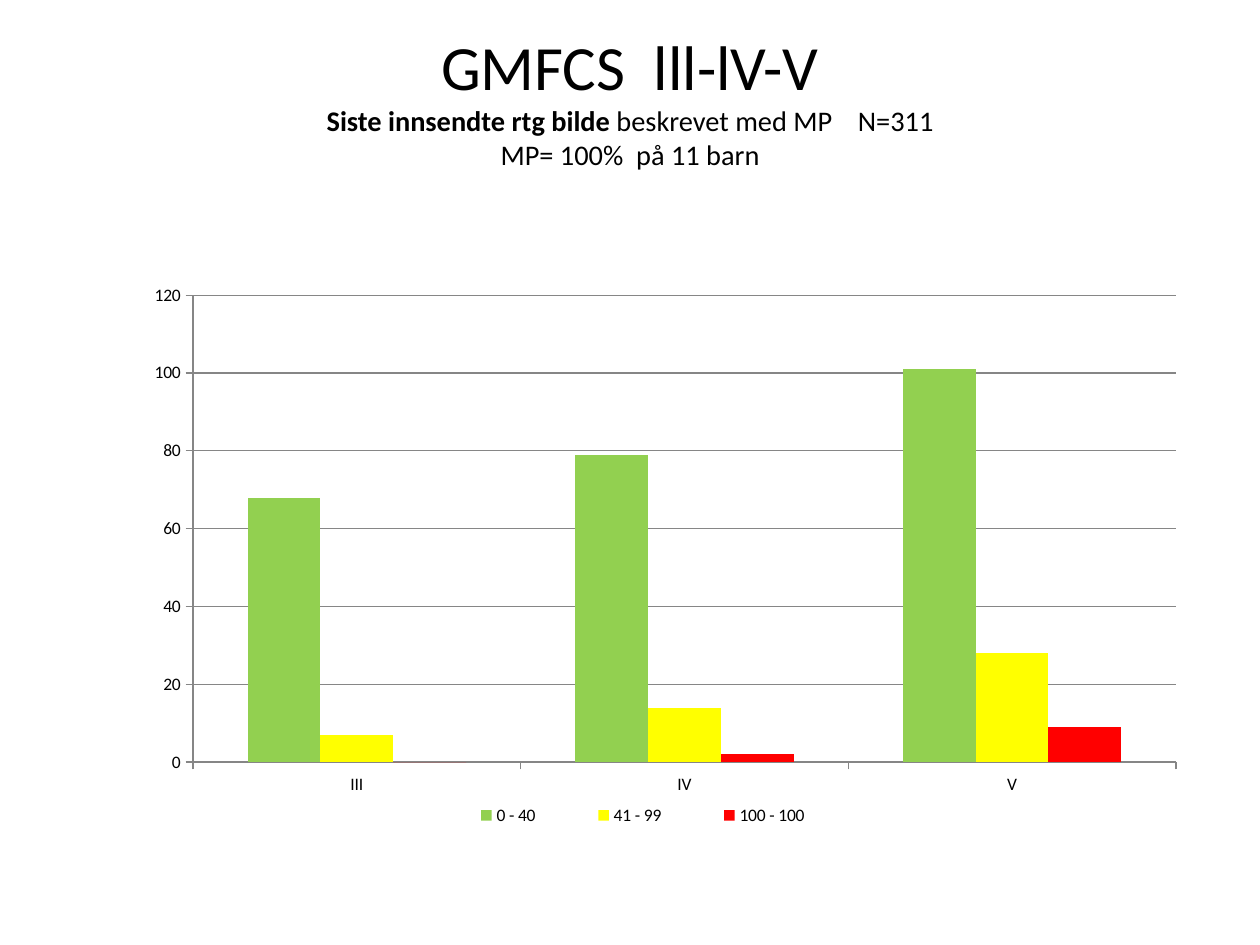
from lxml.etree import SubElement
from pptx import Presentation
from pptx.chart.data import CategoryChartData
from pptx.dml.color import RGBColor
from pptx.enum.chart import XL_CHART_TYPE as ChartType
from pptx.enum.chart import XL_LEGEND_POSITION as LegendPos
from pptx.enum.chart import XL_TICK_MARK as Tick
from pptx.enum.text import MSO_ANCHOR as Anchor
from pptx.enum.text import MSO_AUTO_SIZE as AutoSize
from pptx.enum.text import PP_ALIGN as Align
from pptx.oxml.ns import qn
from pptx.util import Pt

BLACK = RGBColor(0x00, 0x00, 0x00)
GRAY = RGBColor(0x86, 0x86, 0x86)
GREEN = RGBColor(0x92, 0xD0, 0x50)
YELLOW = RGBColor(0xFF, 0xFF, 0x00)
RED = RGBColor(0xFF, 0x00, 0x00)

LEVELS = ["III", "IV", "V"]
MP_GROUPS = [
    ("0 - 40", (68, 79, 101), GREEN),
    ("41 - 99", (7, 14, 28), YELLOW),
    ("100 - 100", (0, 2, 9), RED),
]
HEADING = {"size": Pt(36), "bold": False}
STRONG = {"size": Pt(16.2), "bold": True}
PLAIN = {"size": Pt(16.2), "bold": False}
TITLE_LINES = [
    [("GMFCS  lll-lV-V", HEADING)],
    [("Siste innsendte rtg bilde ", STRONG),
     ("beskrevet med MP    N=311", PLAIN)],
    [("MP= 100%  på 11 barn", PLAIN)],
]


class SlideBuilder:
    font_name = "Calibri"

    def __init__(self, prs):
        self.slide = prs.slides.add_slide(prs.slide_layouts[5])

    def style(self, font, **formats):
        for name, value in formats.items():
            setattr(font, name, value)
        font.name = self.font_name
        font.color.rgb = BLACK

    def title(self, lines, left, top, width, height):
        sp = self.slide.shapes.title
        sp.left, sp.top, sp.width, sp.height = map(Pt, (left, top, width, height))
        tf = sp.text_frame
        frame_format = {"word_wrap": True, "auto_size": AutoSize.NONE,
                        "vertical_anchor": Anchor.BOTTOM, "margin_bottom": Pt(14)}
        for name, value in frame_format.items():
            setattr(tf, name, value)
        p = tf.paragraphs[0]
        p.alignment = Align.CENTER
        for i, line in enumerate(lines):
            if i:
                p.add_line_break()
            for text, formats in line:
                r = p.add_run()
                r.text = text
                self.style(r.font, **formats)

    def column_chart(self, categories, groups, left, top, width, height):
        data = CategoryChartData()
        data.categories = categories
        for name, values, _ in groups:
            data.add_series(name, values)
        chart = self.slide.shapes.add_chart(
            ChartType.COLUMN_CLUSTERED, *map(Pt, (left, top, width, height)), data
        ).chart
        chart.has_title = False
        self.style(chart.font, size=Pt(10))
        chart.has_legend = True
        chart.legend.position = LegendPos.BOTTOM
        chart.legend.include_in_layout = False

        plot = chart.plots[0]
        plot.gap_width = 150
        plot.overlap = 0
        plot.vary_by_categories = False
        for series, (_, _, color) in zip(plot.series, groups):
            series.format.fill.solid()
            series.format.fill.fore_color.rgb = color
            series.format.line.fill.background()

        values = chart.value_axis
        values.minimum_scale, values.maximum_scale, values.major_unit = 0, 120, 20
        values.has_major_gridlines = True
        for axis in (chart.category_axis, values):
            axis.major_tick_mark = Tick.OUTSIDE
            axis.minor_tick_mark = Tick.NONE
        for part in (chart.category_axis, values, values.major_gridlines):
            part.format.line.color.rgb = GRAY
            part.format.line.width = Pt(0.75)

        area = plot._element.getparent()
        self.place(area, 0, left=34, top=11.7, width=561.7, height=266.8,
                   chart_size=(width, height), layoutTarget="inner")
        self.place(chart.legend._element, 1, left=166, top=300, width=250, height=18,
                   chart_size=(width, height))

    def place(self, element, index, left, top, width, height, chart_size, **target):
        """Fix a chart part at a place given in points from the chart's corner."""
        for old in element.findall(qn("c:layout")):
            element.remove(old)
        layout = element.makeelement(qn("c:layout"))
        element.insert(index, layout)
        manual = SubElement(layout, qn("c:manualLayout"))
        chart_width, chart_height = chart_size
        settings = {**target, "xMode": "edge", "yMode": "edge",
                    "x": left / chart_width, "y": top / chart_height,
                    "w": width / chart_width, "h": height / chart_height}
        for name, value in settings.items():
            SubElement(manual, qn(f"c:{name}")).set("val", str(value))


def main():
    prs = Presentation()
    prs.slide_width, prs.slide_height = Pt(720), Pt(540)
    builder = SlideBuilder(prs)
    builder.title(TITLE_LINES, 36, 21.6, 648, 90)
    builder.column_chart(LEVELS, MP_GROUPS, 76.3, 157, 607.7, 325.4)
    prs.save("out.pptx")


if __name__ == "__main__":
    main()
